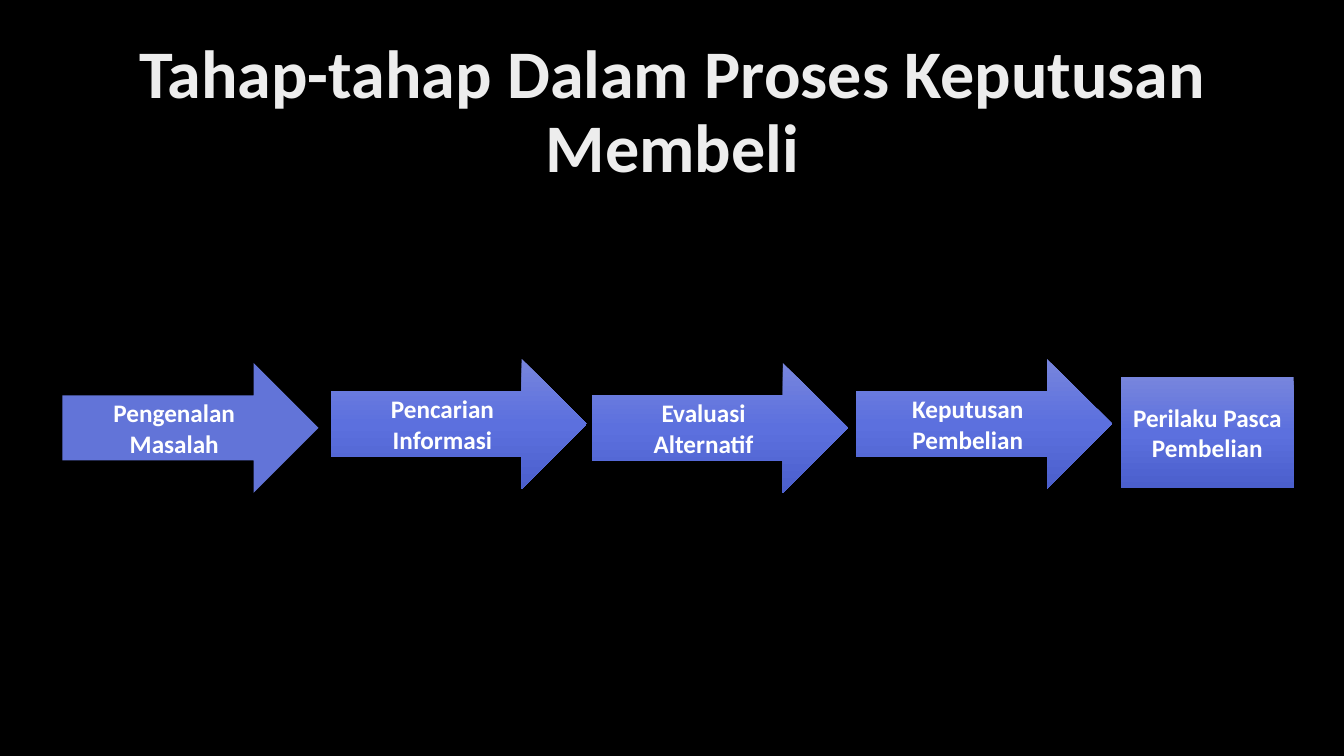
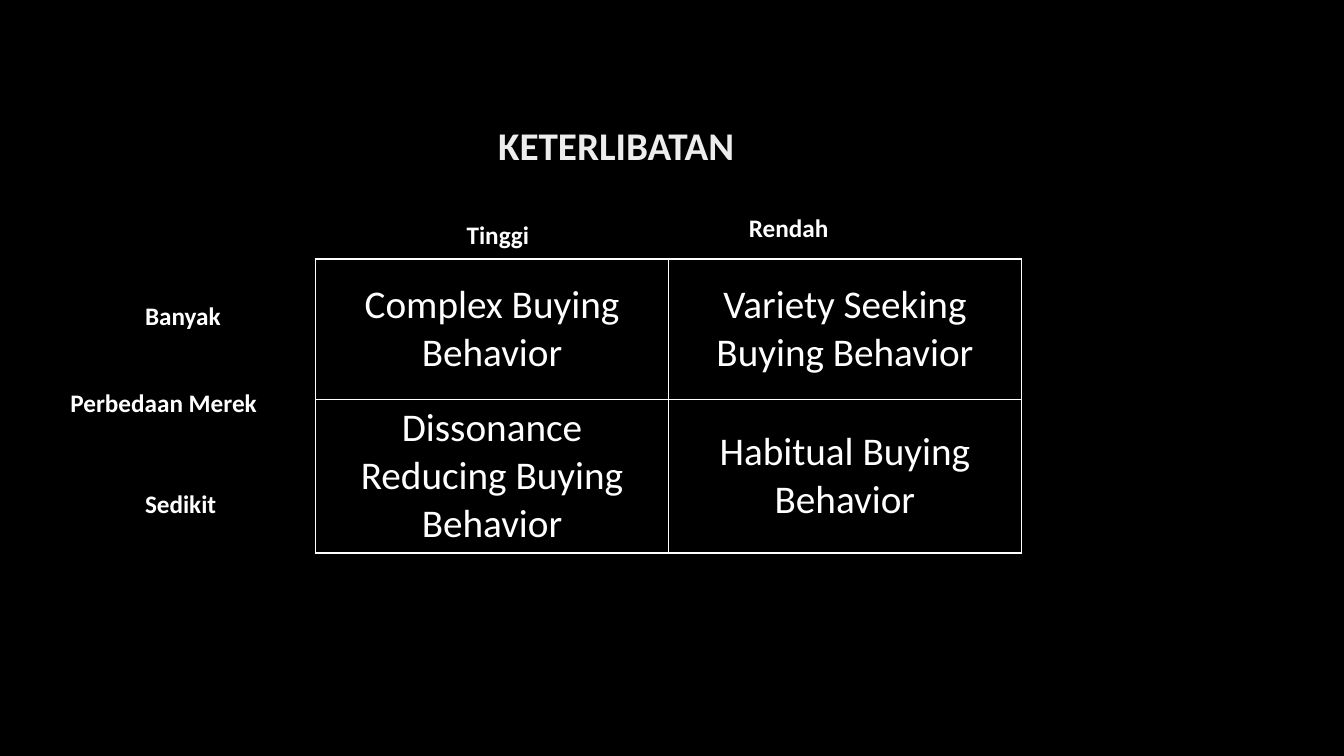
from copy import deepcopy
from dataclasses import dataclass

from lxml.etree import SubElement
from pptx import Presentation
from pptx.dml.color import RGBColor
from pptx.enum.shapes import MSO_SHAPE as Shape
from pptx.enum.text import MSO_ANCHOR as Anchor, MSO_AUTO_SIZE as AutoSize, PP_ALIGN as Align
from pptx.oxml.ns import qn
from pptx.util import Inches, Pt


@dataclass(frozen=True)
class Theme:
    font: str = "Calibri"
    background: str = "000000"
    text: str = "FFFFFF"
    title: str = "EDEDED"
    first_step: str = "6274D8"
    step_gradient: tuple = ((0, "7785DD"), (0.5, "5C70DE"), (1, "4B5FCC"))
    title_size: float = 48.6
    heading_size: float = 28
    label_size: float = 18
    border_width: float = 1


def color(value):
    return RGBColor.from_string(value)


def write(frame, text, *, theme, size, fill=None, bold=True, align=Align.CENTER, spacing=None):
    """Fill a text frame, one paragraph per line of text."""
    frame.text = text
    for paragraph in frame.paragraphs:
        paragraph.alignment = align
        paragraph.line_spacing = spacing
        font = paragraph.font
        font.name, font.size, font.bold = theme.font, Pt(size), bold
        font.color.rgb = color(fill or theme.text)


class Deck:
    def __init__(self, theme):
        self.theme = theme
        self.presentation = Presentation()
        self.presentation.slide_width = Inches(13.33)
        self.presentation.slide_height = Inches(7.5)
        background = self.presentation.slide_master.background.fill
        background.solid()
        background.fore_color.rgb = color(theme.background)
        self.slide = None

    def add_slide(self, title, box, size, align=Align.CENTER):
        layout = self.presentation.slide_layouts.get_by_name("Title Only")
        self.slide = self.presentation.slides.add_slide(layout)
        shape = self.slide.shapes.title
        shape.left, shape.top, shape.width, shape.height = map(Inches, box)
        frame = shape.text_frame
        frame.auto_size = AutoSize.NONE
        frame.vertical_anchor = Anchor.MIDDLE
        write(frame, title, theme=self.theme, size=size, fill=self.theme.title,
              align=align, spacing=0.9)

    def add_step(self, kind, text, box, solid=None):
        """Add a process step, with the theme gradient unless a solid colour is given."""
        shape = self.slide.shapes.add_shape(kind, *map(Inches, box))
        shape.shadow.inherit = False
        shape.line.fill.background()
        if solid:
            shape.fill.solid()
            shape.fill.fore_color.rgb = color(solid)
        else:
            self.apply_gradient(shape)
        shape.text_frame.word_wrap = True
        shape.text_frame.vertical_anchor = Anchor.MIDDLE
        write(shape.text_frame, text, theme=self.theme, size=self.theme.label_size)

    def apply_gradient(self, shape):
        shape.fill.gradient()
        shape.fill.gradient_angle = 270
        stops = shape._element.spPr.find(qn("a:gradFill")).find(qn("a:gsLst"))
        stops.append(deepcopy(stops[0]))
        for stop, (position, value) in zip(shape.fill.gradient_stops, self.theme.step_gradient):
            stop.position = position
            stop.color.rgb = color(value)

    def add_label(self, text, left, top, width, height=0.4, wrap=True):
        box = self.slide.shapes.add_textbox(*map(Inches, (left, top, width, height)))
        box.text_frame.word_wrap = wrap
        box.text_frame.auto_size = AutoSize.SHAPE_TO_FIT_TEXT
        write(box.text_frame, text, theme=self.theme, size=self.theme.label_size,
              align=Align.LEFT)

    def add_matrix(self, rows, left, top, column_width, row_height):
        count, columns = len(rows), len(rows[0])
        table = self.slide.shapes.add_table(
            count, columns, Inches(left), Inches(top),
            Inches(column_width * columns), Inches(row_height * count)).table
        table.first_row = table.horz_banding = False
        for row, texts in enumerate(rows):
            for column, text in enumerate(texts):
                cell = table.cell(row, column)
                self.add_borders(cell)
                cell.fill.background()
                cell.vertical_anchor = Anchor.MIDDLE
                write(cell.text_frame, text, theme=self.theme,
                      size=self.theme.heading_size, bold=False)

    def add_borders(self, cell):
        properties = cell._tc.get_or_add_tcPr()
        for side in ("lnL", "lnR", "lnT", "lnB"):
            line = SubElement(properties, qn(f"a:{side}"), w=str(Pt(self.theme.border_width)))
            fill = SubElement(line, qn("a:solidFill"))
            SubElement(fill, qn("a:srgbClr"), val=self.theme.text)


def add_stages_slide(deck):
    deck.add_slide("Tahap-tahap Dalam Proses Keputusan Membeli",
                   (0.92, 0.4, 11.5, 1.45), deck.theme.title_size)
    stages = (
        ("Pengenalan\nMasalah", 0.62, 3.6, deck.theme.first_step),
        ("Pencarian Informasi", 3.28, 3.56, None),
        ("Evaluasi\nAlternatif", 5.87, 3.6, None),
        ("Keputusan Pembelian", 8.49, 3.56, None),
    )
    for text, left, top, solid in stages:
        deck.add_step(Shape.RIGHT_ARROW, text, (left, top, 2.54, 1.29), solid)
    deck.add_step(Shape.RECTANGLE, "Perilaku Pasca Pembelian", (11.12, 3.74, 1.71, 1.1))


def add_involvement_slide(deck):
    deck.add_slide("KETERLIBATAN", (4.84, 1, 3.58, 0.93), deck.theme.heading_size, Align.LEFT)
    deck.add_matrix((
        ("Complex Buying Behavior", "Variety Seeking Buying Behavior"),
        ("Dissonance Reducing Buying Behavior", "Habitual Buying Behavior"),
    ), left=3.13, top=2.57, column_width=3.5, row_height=1.39)
    deck.add_label("Banyak", 1.34, 2.93, 2.08)
    deck.add_label("Sedikit", 1.34, 4.8, 1.54)
    deck.add_label("Tinggi", 4.53, 2.13, 1.4)
    deck.add_label("Rendah", 7.33, 2.06, 1.77)
    deck.add_label("Perbedaan Merek", 0.6, 3.79, 2.07, wrap=False)


def main():
    deck = Deck(Theme())
    add_stages_slide(deck)
    add_involvement_slide(deck)
    deck.presentation.save("out.pptx")


if __name__ == "__main__":
    main()
